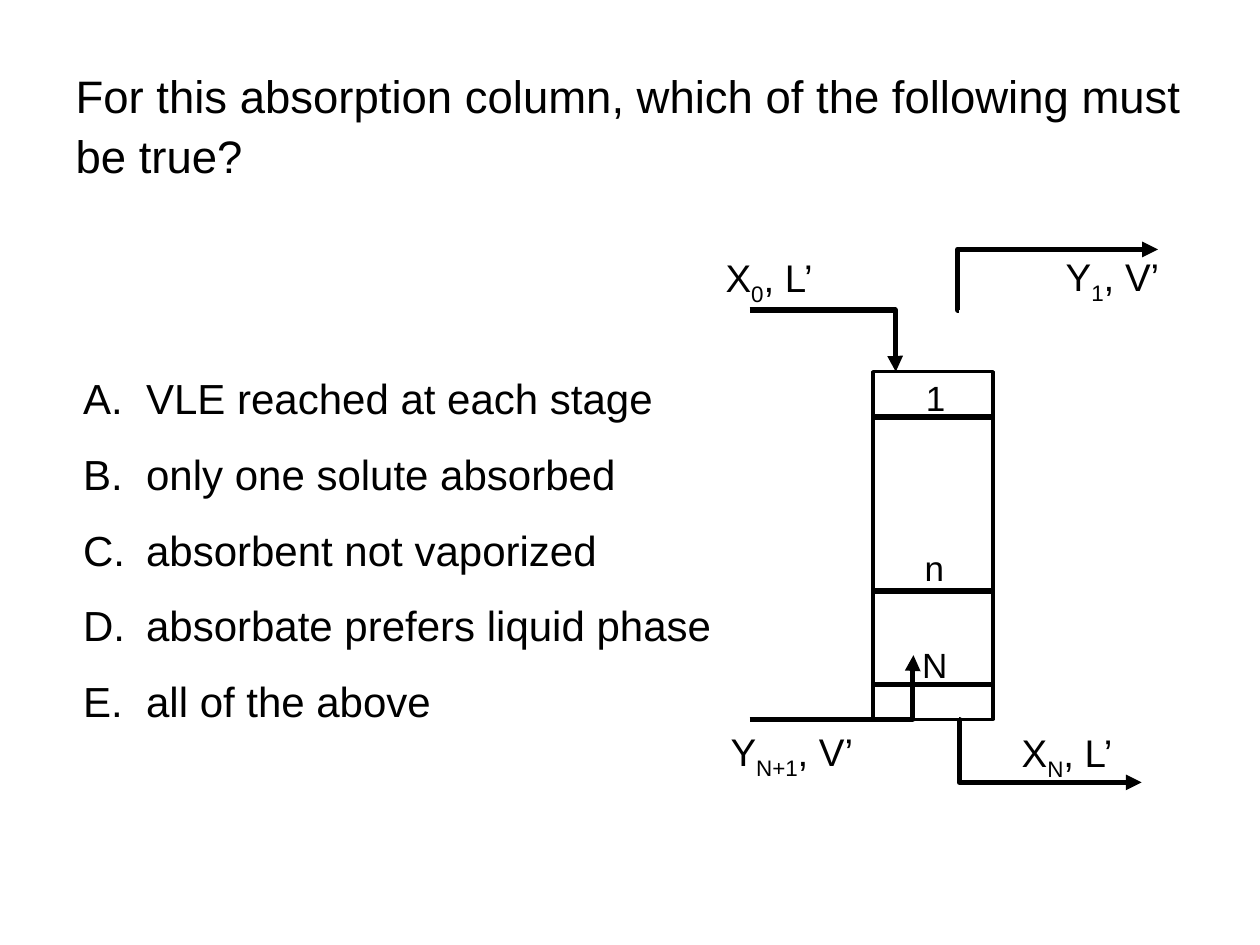
from lxml import etree
from pptx import Presentation
from pptx.dml.color import RGBColor
from pptx.enum.shapes import MSO_CONNECTOR, MSO_SHAPE
from pptx.enum.text import MSO_ANCHOR, MSO_AUTO_SIZE, PP_ALIGN
from pptx.oxml.ns import qn
from pptx.util import Inches, Pt

ELBOW, STRAIGHT = MSO_CONNECTOR.ELBOW, MSO_CONNECTOR.STRAIGHT
LEFT, CENTER = PP_ALIGN.LEFT, PP_ALIGN.CENTER
COLORS = {"ink": "000000", "paper": "FFFFFF"}
FONT = "Arial"

QUESTION = "For this absorption column, which of the following must be true?"
ANSWERS = [
    "VLE reached at each stage",
    "only one solute absorbed",
    "absorbent not vaporized",
    "absorbate prefers liquid phase",
    "all of the above",
]
COLUMN = (6.93, 2.95, 0.95, 2.76)
STAGE_LINES = [3.31, 4.69, 5.43]
# start, end, position of the bend as a share of the width
STREAMS = [
    ((5.95, 2.46), (7.11, 2.95), 0.996),
    ((7.61, 2.46), (9.19, 1.98), -0.006),
    ((5.95, 5.71), (7.25, 5.2), 0.996),
    ((7.61, 5.71), (9.06, 6.21), 0.003),
]
# symbol, subscript, flow, frame
STREAM_LABELS = [
    ("X", "0", ", L’", (5.66, 1.97, 0.89, 0.51)),
    ("Y", "N+1", ", V’", (5.7, 5.73, 1.17, 0.51)),
    ("Y", "1", ", V’", (8.36, 1.96, 0.94, 0.51)),
    ("X", "N", ", L’", (8.01, 5.74, 0.92, 0.51)),
]
STAGE_LABELS = [
    ("1", (7.25, 2.94, 0.35, 0.43), LEFT),
    ("N", (7.22, 5.06, 0.4, 0.43), CENTER),
    ("n", (7.24, 4.29, 0.35, 0.43), CENTER),
]


def color(name):
    return RGBColor.from_string(COLORS[name])


def inches(values):
    return [Inches(value) for value in values]


def add_span(para, text, size, subscript=False):
    span = para.add_run()
    span.text = text
    span.font.size = Pt(size)
    span.font.name = FONT
    span.font.color.rgb = color("ink")
    if subscript:
        span.font._element.set("baseline", "-25000")


def fill_placeholder(box, frame, texts, size, spacing, lettered=False):
    box.left, box.top, box.width, box.height = inches(frame)
    text_frame = box.text_frame
    text_frame.margin_left = text_frame.margin_right = 0
    text_frame.margin_top = text_frame.margin_bottom = 0
    text_frame.vertical_anchor = MSO_ANCHOR.TOP
    text_frame.word_wrap = True
    text_frame.auto_size = MSO_AUTO_SIZE.NONE
    for index, text in enumerate(texts):
        para = text_frame.add_paragraph() if index else text_frame.paragraphs[0]
        para.alignment = LEFT
        para.line_spacing = spacing
        para.space_before = Pt(0)
        if lettered:
            properties = para._p.get_or_add_pPr()
            properties.set("marL", str(Inches(0.5)))
            properties.set("indent", str(-Inches(0.5)))
            etree.SubElement(properties, qn("a:buFont"), typeface=FONT)
            etree.SubElement(properties, qn("a:buAutoNum"), type="alphaUcPeriod")
        add_span(para, text, size)


def add_label(page, frame, spans, size, align=LEFT):
    """Spans are pairs of text and whether it is a subscript."""
    box = page.shapes.add_textbox(*inches(frame))
    box.text_frame.word_wrap = False
    para = box.text_frame.paragraphs[0]
    para.alignment = align
    for text, subscript in spans:
        add_span(para, text, size, subscript)


def add_line(page, start, end, bend=None):
    """Draw a straight line, or an elbow arrow when a bend is given."""
    kind = STRAIGHT if bend is None else ELBOW
    line = page.shapes.add_connector(kind, *inches(start + end))
    line.line.color.rgb = color("ink")
    line.line.width = Pt(3)
    properties = line._element.spPr
    if bend is not None:
        guides = properties.find(qn("a:prstGeom")).get_or_add_avLst()
        etree.SubElement(guides, qn("a:gd"), name="adj1",
                         fmla=f"val {round(bend * 100000)}")
        etree.SubElement(line.line._get_or_add_ln(), qn("a:tailEnd"), type="triangle")
    etree.SubElement(properties, qn("a:effectLst"))


def add_column(page):
    column = page.shapes.add_shape(MSO_SHAPE.RECTANGLE, *inches(COLUMN))
    column.shadow.inherit = False
    column.fill.solid()
    column.fill.fore_color.rgb = color("paper")
    column.line.color.rgb = color("ink")
    column.line.width = Pt(2)


def main():
    deck = Presentation()
    deck.slide_width, deck.slide_height = Inches(10), Inches(7.5)
    page = deck.slides.add_slide(deck.slide_layouts[1])

    fill_placeholder(page.shapes.title, (0.6, 0.5, 8.79, 2.5), [QUESTION], 26, 1.1)
    fill_placeholder(page.placeholders[1], (0.66, 2.76, 5.62, 3.62), ANSWERS, 24, 1.5,
                     lettered=True)

    add_column(page)
    for start, end, bend in STREAMS:
        add_line(page, start, end, bend)
    left, _, width, _ = COLUMN
    for height in STAGE_LINES:
        add_line(page, (left, height), (left + width, height))

    for symbol, index, flow, frame in STREAM_LABELS:
        add_label(page, frame, [(symbol, False), (index, True), (flow, False)], 22)
    for text, frame, align in STAGE_LABELS:
        add_label(page, frame, [(text, False)], 20, align)

    deck.save("out.pptx")


if __name__ == "__main__":
    main()
